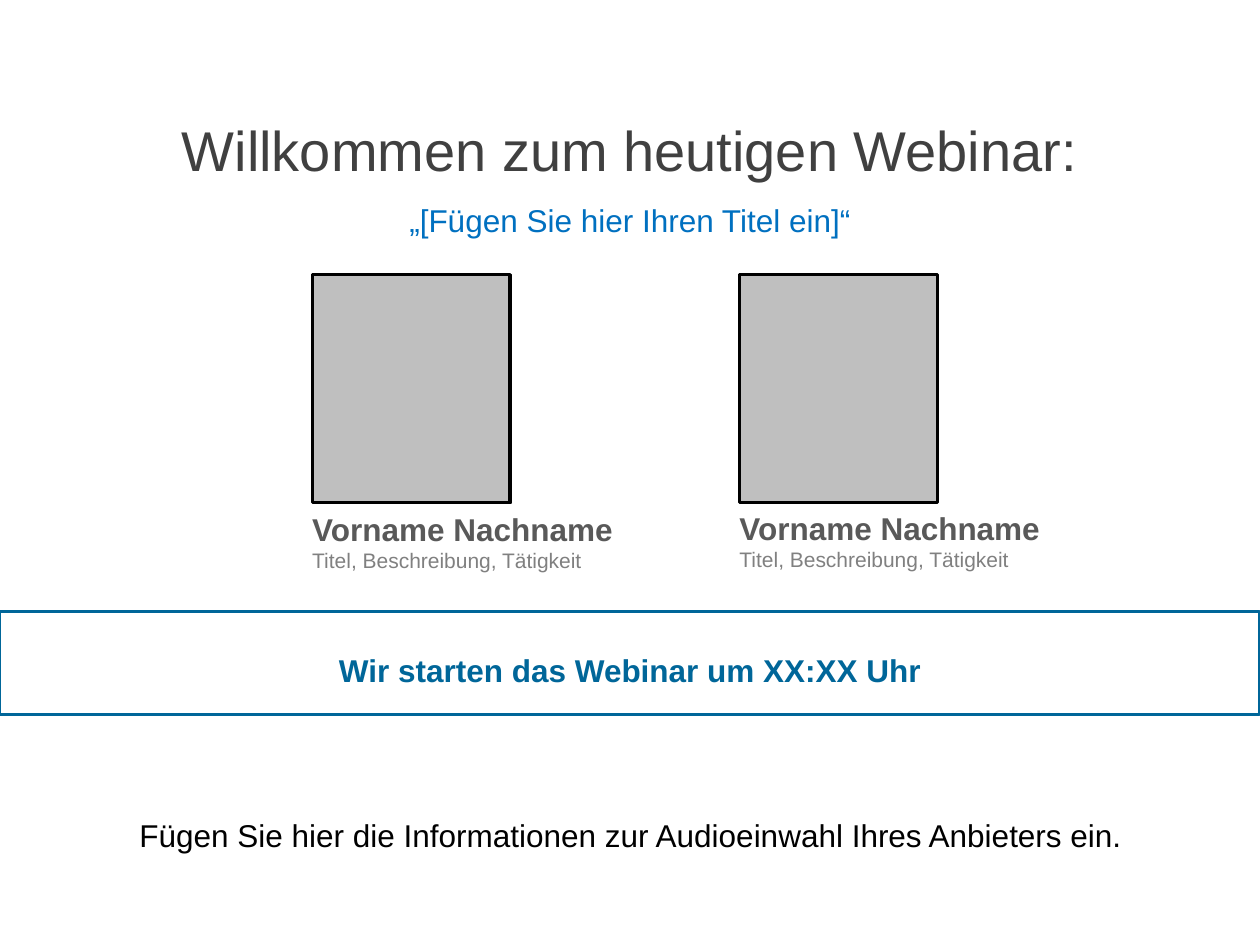
import pptx
import pptx.util
import pptx.dml.color
import pptx.enum.shapes
import pptx.enum.text
from dataclasses import dataclass

ALIGN = pptx.enum.text.PP_ALIGN
ANCHOR = pptx.enum.text.MSO_ANCHOR

TITLE = "Willkommen zum heutigen Webinar:"
TOPIC = "„[Fügen Sie hier Ihren Titel ein]“"
SPEAKERS = [
    ("Vorname Nachname", "Titel, Beschreibung, Tätigkeit"),
    ("Vorname Nachname", "Titel, Beschreibung, Tätigkeit"),
]
START = "Wir starten das Webinar um XX:XX Uhr"
AUDIO = "Fügen Sie hier die Informationen zur Audioeinwahl Ihres Anbieters ein."


@dataclass(frozen=True)
class Theme:
    font: str = "Arial"
    title: str = "404040"
    topic: str = "0070C0"
    name: str = "595959"
    role: str = "808080"
    accent: str = "006699"
    black: str = "000000"
    white: str = "FFFFFF"
    photo: str = "BFBFBF"
    large: int = 32
    body: int = 18
    small: int = 12


T = Theme()
W, H = 10, 7.5
PHOTO_W, PHOTO_H = 1.57, 1.81
PHOTO_LEFT, PHOTO_TOP = 2.48, 2.18
COLUMN = 3.39
INSET = 0.1
CAPTION_W = (3.33, 3.15)
CAPTION_TOP = (4, 3.99)

prs = pptx.Presentation()
prs.slide_width, prs.slide_height = pptx.util.Inches(W), pptx.util.Inches(H)
s = prs.slides.add_slide(prs.slide_layouts[6])


def rgb(value):
    return pptx.dml.color.RGBColor.from_string(value)


def box(at, fill, line, width):
    sp = s.shapes.add_shape(pptx.enum.shapes.MSO_SHAPE.RECTANGLE, *map(pptx.util.Inches, at))
    sp.shadow.inherit = False
    sp.fill.solid()
    sp.fill.fore_color.rgb = rgb(fill)
    sp.line.color.rgb = rgb(line)
    sp.line.width = pptx.util.Pt(width)
    return sp


def write(text, at=None, sp=None, color=T.black, size=T.body, bold=False,
          align=ALIGN.CENTER, anchor=ANCHOR.TOP, spacing=1.0):
    new = sp is None
    if new:
        sp = s.shapes.add_textbox(*map(pptx.util.Inches, at))
    tf = sp.text_frame
    tf.word_wrap = True
    tf.vertical_anchor = anchor
    p = tf.add_paragraph() if tf.text else tf.paragraphs[0]
    p.alignment = align
    p.line_spacing = spacing
    r = p.add_run()
    r.text = text
    r.font.name = T.font
    r.font.size = pptx.util.Pt(size)
    r.font.bold = bold
    r.font.color.rgb = rgb(color)
    return sp


write(TITLE, (0.05 * W, 0.52, 0.9 * W, 0.98), color=T.title, size=T.large,
      anchor=ANCHOR.BOTTOM, spacing=0.85)
write(TOPIC, (0, 1.59, W, 0.37), color=T.topic, spacing=0.85)

for i, (name, role) in enumerate(SPEAKERS):
    left = PHOTO_LEFT + i * COLUMN
    box((left, PHOTO_TOP, PHOTO_W, PHOTO_H), T.photo, T.black, 2)
    sp = write(name, (left - INSET, CAPTION_TOP[i], CAPTION_W[i], 0.61),
               color=T.name, bold=True, align=ALIGN.LEFT)
    write(role, sp=sp, color=T.role, size=T.small, align=ALIGN.LEFT)

banner = box((0, 4.85, W, 0.82), T.white, T.accent, 1.75)
banner.text_frame.margin_top = pptx.util.Inches(0.2)
write(START, sp=banner, color=T.accent, bold=True, anchor=ANCHOR.MIDDLE, spacing=0.9)

write(AUDIO, (0.83, 6.43, 8.35, 0.4))

prs.save("out.pptx")
